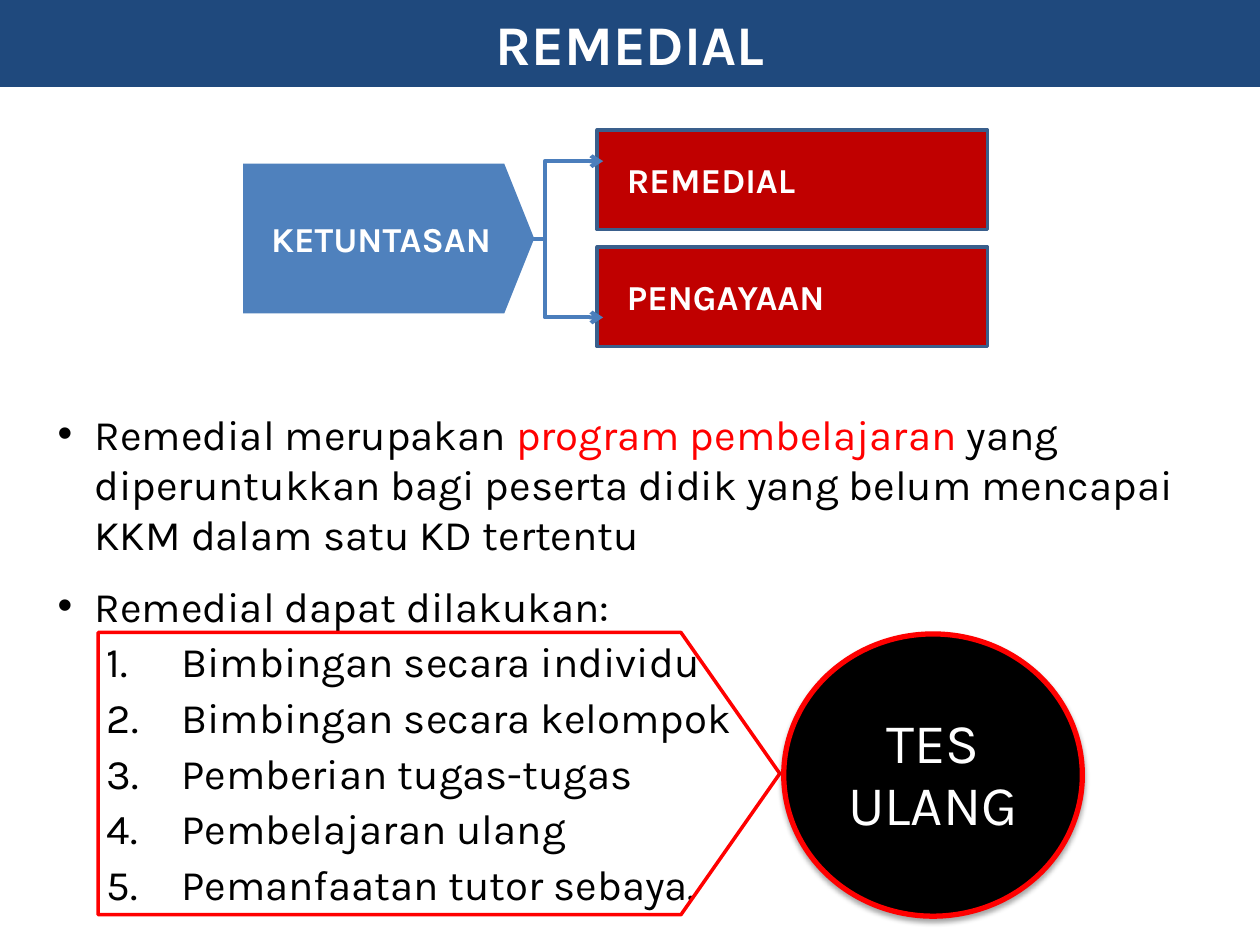
import pptx
import pptx.util
import pptx.oxml
import pptx.oxml.ns
import pptx.dml.color
import pptx.enum.shapes
import pptx.enum.text

Cm, Pt = pptx.util.Cm, pptx.util.Pt
RGB = pptx.dml.color.RGBColor
MSO = pptx.enum.shapes.MSO_SHAPE
ALIGN = pptx.enum.text.PP_ALIGN
MIDDLE = pptx.enum.text.MSO_ANCHOR.MIDDLE
NO_FIT = pptx.enum.text.MSO_AUTO_SIZE.NONE

NAVY = RGB(0x1F, 0x49, 0x7D)
BLUE = RGB(0x4F, 0x81, 0xBD)
BRACE_BLUE = RGB(0x4B, 0x7E, 0xBC)
EDGE_BLUE = RGB(0x3A, 0x5F, 0x8C)
DARK_RED = RGB(0xC0, 0x00, 0x00)
RED = RGB(0xFF, 0x00, 0x00)
BLACK = RGB(0x00, 0x00, 0x00)
WHITE = RGB(0xFF, 0xFF, 0xFF)

FONT = "Karla"
HEADING = {"name": FONT, "size": Pt(32), "bold": True}
LABEL = {"name": FONT, "size": Pt(20), "bold": True}
CIRCLE = {"name": FONT, "size": Pt(32), "bold": False}
BODY = {"name": FONT, "size": Pt(24)}

INTRO = [
    [("Remedial merupakan ", BLACK), ("program pembelajaran ", RED),
     ("yang diperuntukkan bagi peserta didik yang belum mencapai "
      "KKM dalam satu KD tertentu", BLACK)],
    [("Remedial dapat dilakukan:", BLACK)],
]
METHODS = ["Bimbingan secara individu", "Bimbingan secara kelompok",
           "Pemberian tugas-tugas", "Pembelajaran ulang",
           "Pemanfaatan tutor sebaya."]


def set_attrs(obj, values):
    for name, value in values.items():
        setattr(obj, name, value)


def place(sp, left, top, width, height):
    set_attrs(sp, {"left": Cm(left), "top": Cm(top),
                   "width": Cm(width), "height": Cm(height)})


def add_xml(parent, xml):
    ns = pptx.oxml.ns.nsdecls("a")
    parent.append(pptx.oxml.parse_xml(xml.replace(">", f" {ns}>", 1)
                                      if "/>" not in xml.split(">")[0] + ">"
                                      else xml.replace("/>", f" {ns}/>", 1)))


def add_run(p, text, font, color):
    r = p.add_run()
    r.text = text
    set_attrs(r.font, font)
    r.font.color.rgb = color


def write_label(sp, lines, font, align=ALIGN.CENTER, **spacing):
    tf = sp.text_frame
    set_attrs(tf, {"word_wrap": True, "auto_size": NO_FIT,
                   "vertical_anchor": MIDDLE})
    for i, line in enumerate(lines):
        p = tf.add_paragraph() if i else tf.paragraphs[0]
        set_attrs(p, {"alignment": align, **spacing})
        add_run(p, line, font, WHITE)


def add_figure(shapes, kind, box, fill=None, line=None, width=2, adj=()):
    sp = shapes.add_shape(kind, *map(Cm, box))
    sp.shadow.inherit = False
    for i, value in enumerate(adj):
        sp.adjustments[i] = value
    if fill is None:
        sp.fill.background()
    else:
        sp.fill.solid()
        sp.fill.fore_color.rgb = fill
    if line is None:
        sp.line.fill.background()
    else:
        sp.line.color.rgb = line
        sp.line.width = Pt(width)
    return sp


def add_title(s):
    sp = s.shapes.title
    place(sp, 0, 0, 25.4, 1.75)
    sp.fill.solid()
    sp.fill.fore_color.rgb = NAVY
    write_label(sp, ["REMEDIAL"], HEADING)


def format_item(p, hang, left, before, bullet, level=0):
    set_attrs(p, {"level": level, "space_before": Pt(before)})
    pPr = p._p.get_or_add_pPr()
    pPr.set("marL", str(Cm(left)))
    pPr.set("indent", str(-Cm(hang)))
    for xml in bullet:
        add_xml(pPr, xml)


def add_body(s):
    sp = s.placeholders[1]
    place(sp, 0.91, 8.1, 23.6, 10.08)
    tf = sp.text_frame
    tf.auto_size = NO_FIT
    dot = ['<a:buChar char="•"/>']
    number = [f'<a:buFont typeface="{FONT}"/>',
              '<a:buAutoNum type="arabicPeriod"/>']
    for i, runs in enumerate(INTRO):
        p = tf.add_paragraph() if i else tf.paragraphs[0]
        format_item(p, 0.74, 0.74, 12 if i else 4.8, dot)
        for text, color in runs:
            add_run(p, text, BODY, color)
    for text in METHODS:
        p = tf.add_paragraph()
        format_item(p, 1.5, 2.49, 3, number, level=1)
        add_run(p, text, BODY, BLACK)


def add_branches(s):
    # Outcome boxes
    for i, text in enumerate(["REMEDIAL", "PENGAYAAN"]):
        box = add_figure(s.shapes, MSO.RECTANGLE,
                         (12.04, 2.62 + 2.36 * i, 7.87, 2.01),
                         DARK_RED, EDGE_BLUE)
        box.text_frame.margin_left = Cm(0.6)
        write_label(box, [text], LABEL, ALIGN.LEFT)
    # Square brace with an arrowhead at both ends
    brace = add_figure(s.shapes, MSO.LEFT_BRACE, (9.8, 3.25, 2.36, 3.15),
                       line=BRACE_BLUE, width=2.25, adj=(0, 0.5))
    ln = brace.line._get_or_add_ln()
    for end in ("head", "tail"):
        add_xml(ln, f'<a:{end}End type="arrow"/>')
    # Starting point
    plate = add_figure(s.shapes, MSO.PENTAGON, (4.9, 3.3, 5.87, 3.02),
                       BLUE, adj=(0.2,))
    write_label(plate, ["KETUNTASAN"], LABEL)


def add_retest(s):
    shapes = s.shapes.add_group_shape().shapes
    add_figure(shapes, MSO.PENTAGON, (1.98, 12.75, 13.74, 5.69),
               line=RED, adj=(0.35,))
    circle = add_figure(shapes, MSO.OVAL, (15.8, 12.78, 6.02, 5.69),
                        BLACK, RED, 3)
    write_label(circle, ["TES", "ULANG"], CIRCLE, line_spacing=Pt(35))
    effects = circle._element.spPr.find(pptx.oxml.ns.qn("a:effectLst"))
    add_xml(effects, f'<a:outerShdw blurRad="{Pt(3.1)}" dist="{Pt(1.8)}" '
                     'dir="5400000" rotWithShape="0"><a:srgbClr val="000000">'
                     '<a:alpha val="35000"/></a:srgbClr></a:outerShdw>')


def main():
    prs = pptx.Presentation()
    set_attrs(prs, {"slide_width": Cm(25.4), "slide_height": Cm(19.05)})
    s = prs.slides.add_slide(prs.slide_layouts[1])
    add_title(s)
    add_body(s)
    add_branches(s)
    add_retest(s)
    prs.save("out.pptx")


if __name__ == "__main__":
    main()
